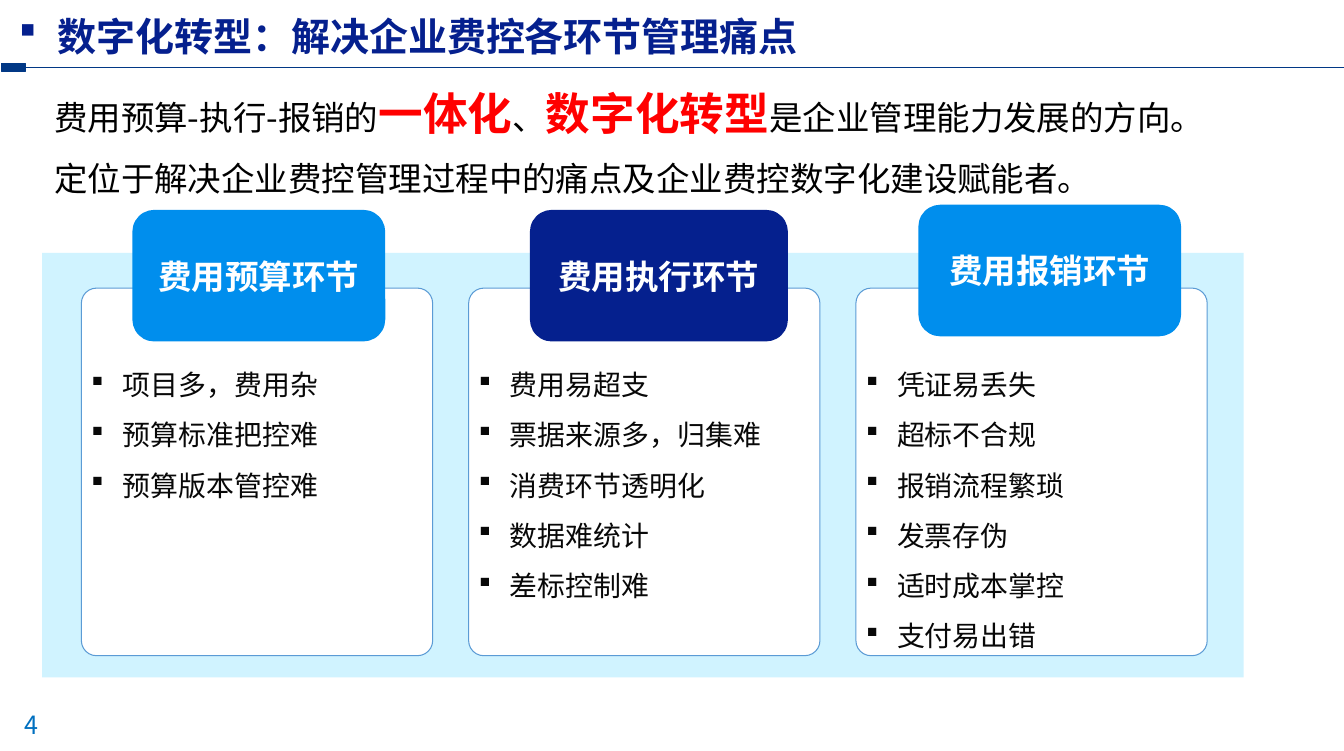
from lxml import etree
from pptx import Presentation
from pptx import util as u
from pptx.dml.color import RGBColor
from pptx.enum import shapes, text
from pptx.oxml.ns import qn

FONT = "Noto Sans CJK SC"
C = {"navy": "05208E", "blue": "008EED", "rule": "013885", "number": "0070C0",
     "panel": "57D6FF", "border": "5B9BD5", "ink": "080808",
     "black": "000000", "red": "FF0000", "white": "FFFFFF"}

TITLE = "数字化转型：解决企业费控各环节管理痛点"
PAGE = "4"
INTRO = [
    [("费用预算-执行-报销的", False), ("一体化", True), ("、", False),
     ("数字化转型", True), ("是企业管理能力发展的方向。", False)],
    [("定位于解决企业费控管理过程中的痛点及企业费控数字化建设赋能者。", False)],
]
STAGES = [
    {"name": "费用预算环节", "color": "blue", "head": (3.35, 5.31, 6.4, 3.33),
     "points": ["项目多，费用杂", "预算标准把控难", "预算版本管控难"]},
    {"name": "费用执行环节", "color": "navy", "head": (13.41, 5.31, 6.53, 3.33),
     "points": ["费用易超支", "票据来源多，归集难", "消费环节透明化", "数据难统计", "差标控制难"]},
    {"name": "费用报销环节", "color": "blue", "head": (23.24, 5.18, 6.65, 3.33),
     "points": ["凭证易丢失", "超标不合规", "报销流程繁琐", "发票存伪", "适时成本掌控", "支付易出错"]},
]
CARD_LEFT, CARD_TOP, CARD_W, CARD_H, CARD_PITCH = 2.06, 7.29, 8.89, 9.3, 9.8
LIST_TOP, LINE_H = 8.76, 1.27

prs = Presentation()
prs.slide_width, prs.slide_height = u.Cm(34.01), u.Cm(19)
s = prs.slides.add_slide(prs.slide_layouts[6])


def rgb(name):
    return RGBColor.from_string(C[name])


def add_text(p, content, size=20, color="ink", bold=False):
    r = p.add_run()
    r.text = content
    r.font.size, r.font.bold, r.font.name = u.Pt(size), bold, FONT
    r.font.color.rgb = rgb(color)
    etree.SubElement(r._r.get_or_add_rPr(), qn("a:ea"), typeface=FONT)


def add_bullet(p, indent):
    pPr = p._p.get_or_add_pPr()
    pPr.set("marL", str(u.Cm(indent)))
    pPr.set("indent", str(-u.Cm(indent)))
    etree.SubElement(pPr, qn("a:buFont"), typeface="Wingdings")
    etree.SubElement(pPr, qn("a:buChar"), char="§")


def add_box(kind, box, fill, line=None, width=0.75):
    sp = s.shapes.add_shape(kind, *map(u.Cm, box))
    sp.shadow.inherit = False
    sp.fill.solid()
    sp.fill.fore_color.rgb = rgb(fill)
    if line:
        sp.line.color.rgb = rgb(line)
        sp.line.width = u.Pt(width)
    else:
        sp.line.fill.background()
    return sp


def add_frame(box, anchor=text.MSO_ANCHOR.TOP):
    tf = s.shapes.add_textbox(*map(u.Cm, box)).text_frame
    tf.word_wrap = True
    tf.vertical_anchor = anchor
    return tf


def paragraphs(tf, items):
    for i, item in enumerate(items):
        yield (tf.add_paragraph() if i else tf.paragraphs[0]), item


RECT = shapes.MSO_SHAPE.RECTANGLE
ROUND = shapes.MSO_SHAPE.ROUNDED_RECTANGLE

rule = s.shapes.add_connector(shapes.MSO_CONNECTOR.STRAIGHT,
                              u.Cm(34.01), u.Cm(1.7), u.Cm(0.61), u.Cm(1.7))
rule.line.color.rgb = rgb("rule")
rule.line.width = u.Pt(0.5)
etree.SubElement(rule._element.spPr, qn("a:effectLst"))
add_box(RECT, (0.03, 1.6, 0.61, 0.2), "rule", "rule")

number = add_frame((0.36, 17.83, 1.4, 1.02), text.MSO_ANCHOR.MIDDLE)
add_text(number.paragraphs[0], PAGE, size=18, color="number")

panel = add_box(RECT, (1.07, 6.4, 30.4, 10.74), "panel")
panel_color = panel._element.spPr.find(qn("a:solidFill"))[0]
etree.SubElement(panel_color, qn("a:alpha"), val="28000")

for i, stage in enumerate(STAGES):
    left = CARD_LEFT + i * CARD_PITCH
    card = add_box(ROUND, (left, CARD_TOP, CARD_W, CARD_H), "white", "border")
    card.adjustments[0] = 0.043
    points = stage["points"]
    tf = add_frame((left, LIST_TOP, CARD_W, LINE_H * len(points) + 0.3))
    for p, point in paragraphs(tf, points):
        p.alignment = text.PP_ALIGN.JUSTIFY
        p.line_spacing = 1.5
        add_bullet(p, 0.79)
        add_text(p, point)

for stage in STAGES:
    sp = add_box(ROUND, stage["head"], stage["color"])
    sp.text_frame.vertical_anchor = text.MSO_ANCHOR.MIDDLE
    p = sp.text_frame.paragraphs[0]
    p.alignment = text.PP_ALIGN.CENTER
    add_text(p, stage["name"], size=24, color="white", bold=True)

p = add_frame((0.23, 0.18, 20.98, 1.45)).paragraphs[0]
add_bullet(p, 0.97)
add_text(p, TITLE, size=28, color="navy", bold=True)

tf = add_frame((1.37, 2.03, 30.63, 3))
tf.margin_left = tf.margin_right = tf.margin_top = tf.margin_bottom = 0
for p, parts in paragraphs(tf, INTRO):
    p.line_spacing = u.Pt(42.3)
    for content, strong in parts:
        add_text(p, content, size=32 if strong else 24,
                 color="red" if strong else "black", bold=strong)

prs.save("out.pptx")
